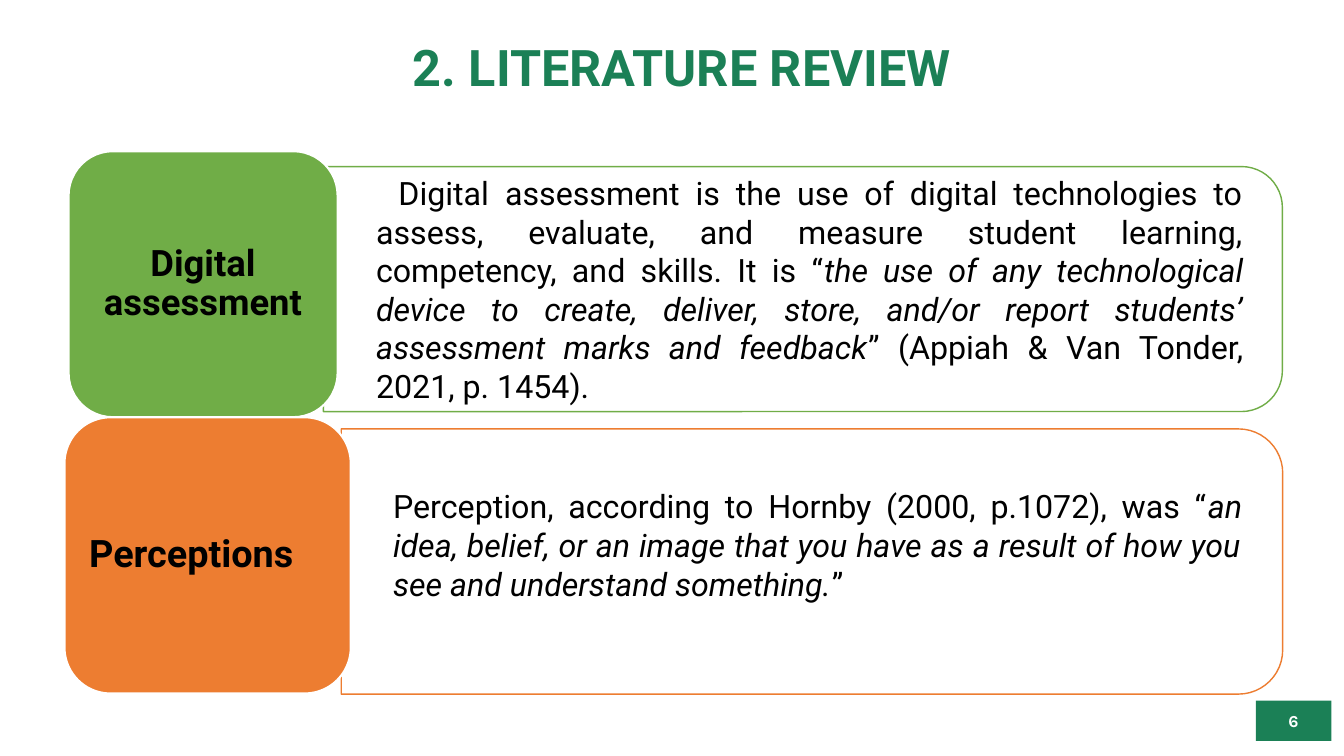
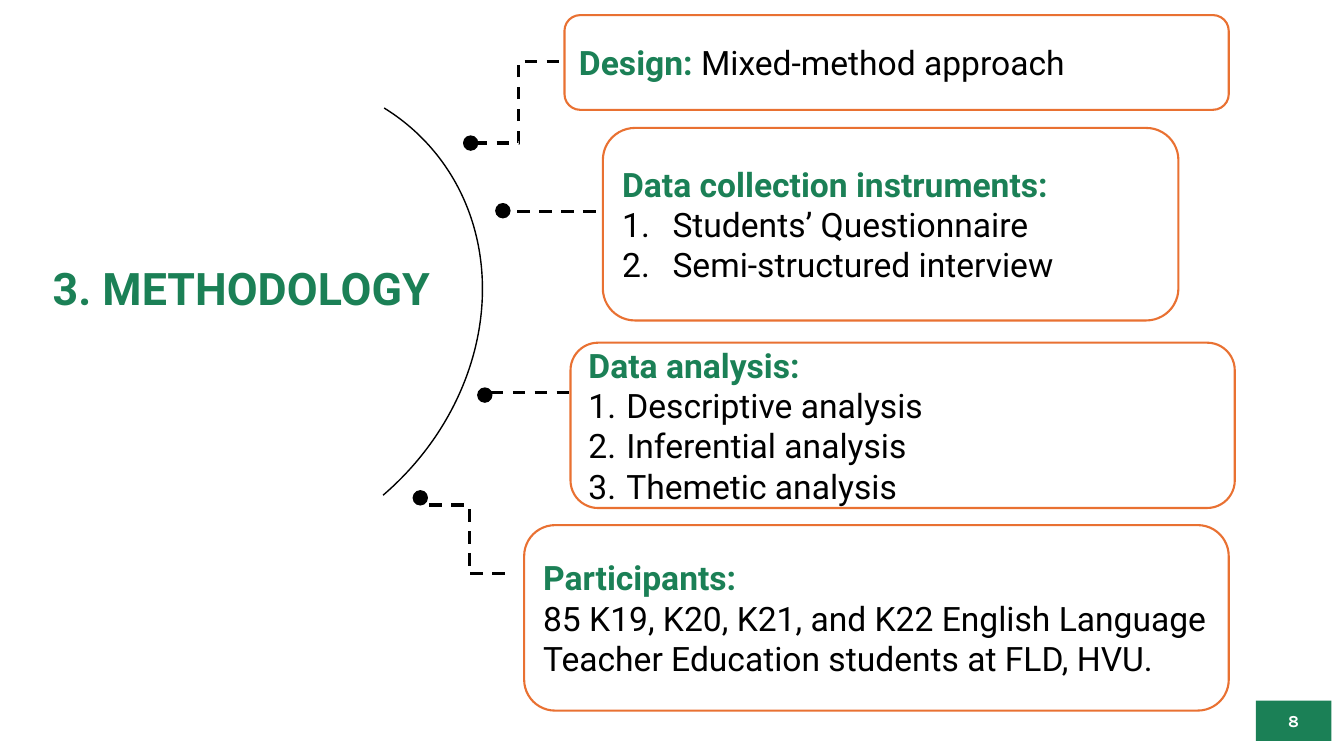
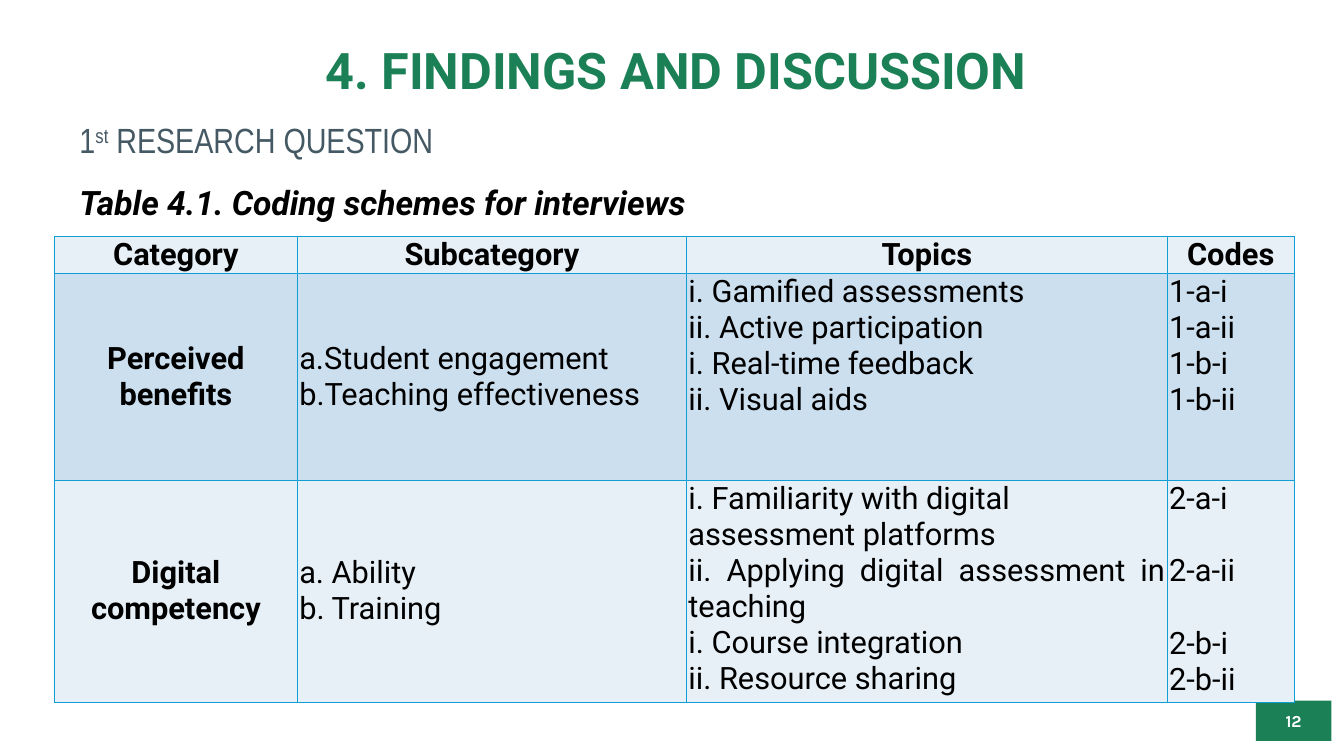
from lxml.etree import SubElement
from pptx import Presentation
from pptx.dml.color import RGBColor
from pptx.enum.dml import MSO_LINE
from pptx.enum.shapes import MSO_CONNECTOR, MSO_SHAPE
from pptx.enum.text import MSO_ANCHOR, PP_ALIGN
from pptx.oxml.ns import qn
from pptx.util import Pt

WHITE = RGBColor(0xFF, 0xFF, 0xFF)
BLACK = RGBColor(0x00, 0x00, 0x00)
GREEN = RGBColor(0x1B, 0x80, 0x56)
LEAF = RGBColor(0x70, 0xAD, 0x47)
ORANGE = RGBColor(0xED, 0x7D, 0x31)
CARD_ORANGE = RGBColor(0xE9, 0x71, 0x32)
SLATE = RGBColor(0x45, 0x59, 0x64)
TABLE_BLUE = RGBColor(0x0F, 0x9E, 0xD5)
PALE_BLUE = RGBColor(0xE7, 0xF0, 0xF7)
SOFT_BLUE = RGBColor(0xCC, 0xDF, 0xEF)

LEFT, CENTER, JUSTIFY = PP_ALIGN.LEFT, PP_ALIGN.CENTER, PP_ALIGN.JUSTIFY
TOP, MIDDLE = MSO_ANCHOR.TOP, MSO_ANCHOR.MIDDLE


def add_run(paragraph, text, size=24, color=BLACK, bold=False, italic=False,
            font="Roboto", superscript=False):
    run = paragraph.add_run()
    run.text = text
    run.font.name = font
    run.font.size = Pt(size)
    run.font.color.rgb = color
    run.font.bold = bold
    run.font.italic = italic
    if superscript:
        run._r.get_or_add_rPr().set("baseline", "30000")


def start_paragraph(frame, align=LEFT, line_spacing=None):
    """Return the empty first paragraph of a frame, or a new one after its text."""
    paragraph = frame.paragraphs[0]
    if paragraph.runs:
        paragraph = frame.add_paragraph()
    paragraph.alignment = align
    if line_spacing:
        paragraph.line_spacing = line_spacing
    return paragraph


def indent(paragraph, left, first, numbered=False):
    properties = paragraph._p.get_or_add_pPr()
    properties.set("marL", str(Pt(left)))
    properties.set("indent", str(Pt(first)))
    if numbered:
        SubElement(properties, qn("a:buAutoNum"), type="arabicPeriod")


def set_borders(cell, color, width):
    properties = cell._tc.get_or_add_tcPr()
    for side in ("a:lnL", "a:lnR", "a:lnT", "a:lnB"):
        border = SubElement(properties, qn(side), w=str(Pt(width)))
        fill = SubElement(border, qn("a:solidFill"))
        SubElement(fill, qn("a:srgbClr"), val=str(color))


class Deck:
    """Holds the presentation, its style and the current slide."""

    def __init__(self):
        self.presentation = Presentation()
        self.presentation.slide_width = Pt(960)
        self.presentation.slide_height = Pt(540)
        self.slide = None

    def new_slide(self, number, title, title_box, title_size=36):
        layout = self.presentation.slide_layouts[6]
        self.slide = self.presentation.slides.add_slide(layout)
        frame = self.text_box(*title_box, anchor=MIDDLE)
        add_run(start_paragraph(frame, CENTER, 0.9), title,
                size=title_size, color=GREEN, bold=True)
        tab = self.shape(MSO_SHAPE.RECTANGLE, 897, 500.4, 54, 28.8, GREEN)
        add_run(start_paragraph(tab.text_frame, CENTER), str(number),
                size=12, color=WHITE, bold=True, font="Karla")

    def text_box(self, left, top, width, height, anchor=TOP, margins=(7.2, 3.6)):
        box = self.slide.shapes.add_textbox(Pt(left), Pt(top), Pt(width), Pt(height))
        return self.set_frame(box.text_frame, anchor, margins)

    def set_frame(self, frame, anchor, margins):
        frame.word_wrap = True
        frame.vertical_anchor = anchor
        frame.margin_left = frame.margin_right = Pt(margins[0])
        frame.margin_top = frame.margin_bottom = Pt(margins[1])
        return frame

    def shape(self, kind, left, top, width, height, fill=None, line=None, line_width=1):
        shape = self.slide.shapes.add_shape(kind, Pt(left), Pt(top), Pt(width), Pt(height))
        shape.shadow.inherit = False
        if fill is None:
            shape.fill.background()
        else:
            shape.fill.solid()
            shape.fill.fore_color.rgb = fill
        if line is None:
            shape.line.fill.background()
        else:
            shape.line.color.rgb = line
            shape.line.width = Pt(line_width)
        self.set_frame(shape.text_frame, MIDDLE, (7.2, 3.6))
        return shape

    def panel(self, left, top, width, height, color):
        """Draw a panel with rounded right corners: a turned top-rounded rectangle."""
        shift = (width - height) / 2
        panel = self.shape(MSO_SHAPE.ROUND_2_SAME_RECTANGLE, left + shift, top - shift,
                           height, width, WHITE, color)
        panel.rotation = 90

    def definition(self, box, before, quote, after, first_indent=0):
        paragraph = start_paragraph(
            self.text_box(*box, anchor=MIDDLE, margins=(0, 0)), JUSTIFY)
        indent(paragraph, 0, first_indent)
        add_run(paragraph, before, size=23)
        add_run(paragraph, quote, size=23, italic=True)
        add_run(paragraph, after, size=23)

    def term(self, box, text, color, size, align):
        tile = self.shape(MSO_SHAPE.ROUNDED_RECTANGLE, *box, color, WHITE, 1.5)
        self.set_frame(tile.text_frame, MIDDLE, (8, 4))
        add_run(start_paragraph(tile.text_frame, align, 0.9), text, size=size, bold=True)

    def card(self, box, heading, inline="", lines=(), number_indent=0):
        card = self.shape(MSO_SHAPE.ROUNDED_RECTANGLE, *box, WHITE, CARD_ORANGE, 1.5)
        paragraph = start_paragraph(card.text_frame)
        add_run(paragraph, heading, color=GREEN, bold=True)
        if inline:
            add_run(paragraph, inline)
        for line in lines:
            paragraph = start_paragraph(card.text_frame)
            if number_indent:
                indent(paragraph, number_indent, -number_indent, numbered=True)
            add_run(paragraph, line)

    def dot(self, left, top):
        self.shape(MSO_SHAPE.FLOWCHART_CONNECTOR, left, top, 10, 10, BLACK, BLACK)

    def dashed_line(self, kind, *ends):
        line = self.slide.shapes.add_connector(kind, *(Pt(end) for end in ends))
        line.line.color.rgb = BLACK
        line.line.width = Pt(2.25)
        line.line.dash_style = MSO_LINE.DASH
        SubElement(line._element.spPr, qn("a:effectLst"))

    def table(self, left, top, widths, heights, rows):
        """Each row lists cells, each cell lists (text, align, space before)."""
        frame = self.slide.shapes.add_table(
            len(rows), len(widths), Pt(left), Pt(top), Pt(sum(widths)), Pt(sum(heights)))
        table = frame.table
        table.first_row = table.horz_banding = False
        for column, width in zip(table.columns, widths):
            column.width = Pt(width)
        for row_index, cells in enumerate(rows):
            table.rows[row_index].height = Pt(heights[row_index])
            for column_index, lines in enumerate(cells):
                cell = table.cell(row_index, column_index)
                set_borders(cell, TABLE_BLUE, 1)
                cell.fill.solid()
                cell.fill.fore_color.rgb = SOFT_BLUE if row_index % 2 else PALE_BLUE
                cell.margin_left = cell.margin_right = Pt(1.4)
                cell.margin_top = cell.margin_bottom = Pt(0)
                cell.vertical_anchor = MIDDLE if row_index and column_index < 2 else TOP
                for text, align, space in lines:
                    paragraph = start_paragraph(cell.text_frame, align)
                    if space:
                        paragraph.space_before = Pt(space)
                    add_run(paragraph, text, size=22,
                            bold=row_index == 0 or column_index == 0)


def cell_lines(*texts, align=JUSTIFY):
    return [(text, align, 0) for text in texts]


def literature_review(deck):
    deck.new_slide(6, "2. LITERATURE REVIEW", (77, 20, 820, 60))
    deck.panel(231, 119, 685, 175, LEAF)
    deck.definition(
        (268.6, 119, 620, 175),
        "Digital assessment is the use of digital technologies to assess, evaluate, "
        "and measure student learning, competency, and skills. It is “",
        "the use of any technological device to create, deliver, store, and/or report "
        "students’ assessment marks and feedback",
        "” (Appiah & Van Tonder, 2021, p. 1454).", first_indent=16)
    deck.term((49, 108, 192.2, 190), "Digital assessment", LEAF, 26, CENTER)
    deck.panel(243.7, 306.4, 672.5, 189.4, ORANGE)
    deck.definition(
        (280.8, 339, 606.5, 100),
        "Perception, according to Hornby (2000, p.1072), was “",
        "an idea, belief, or an image that you have as a result of how you see and "
        "understand something.", "”")
    deck.term((46.1, 298.1, 204.5, 197.3), "Perceptions", ORANGE, 27, LEFT)


def methodology(deck):
    deck.new_slide(8, "3. METHODOLOGY", (12, 178, 321, 60), title_size=32)
    deck.card((403.2, 10.8, 474.5, 67.7), "Design: ", inline="Mixed-method approach")
    deck.card((430.6, 91.4, 411.1, 137.5), "Data collection instruments:",
              lines=("Students’ Questionnaire", "Semi-structured interview"),
              number_indent=36)
    deck.card((374.4, 375.1, 503.3, 132.5), "Participants:",
              lines=("85 K19, K20, K21, and K22 English Language Teacher Education "
                     "students at FLD, HVU.",))
    for left, top in ((331.2, 97.2), (354.2, 145.5), (341.3, 277.2), (295.2, 350.6)):
        deck.dot(left, top)
    deck.dashed_line(MSO_CONNECTOR.ELBOW, 339.1, 102.2, 401.8, 43.9)
    deck.dashed_line(MSO_CONNECTOR.STRAIGHT, 369.4, 151.2, 430.6, 151.2)
    deck.dashed_line(MSO_CONNECTOR.STRAIGHT, 350.6, 280.1, 411.8, 280.1)
    deck.dashed_line(MSO_CONNECTOR.ELBOW, 306.7, 360.7, 363.6, 409.7)
    arc = deck.shape(MSO_SHAPE.ARC, 1.4, 41, 329.8, 375.1, line=BLACK)
    arc.adjustments[0] = 153.68
    arc.rotation = 49.4
    deck.card((407.5, 244.8, 474.5, 118.1), "Data analysis:",
              lines=("Descriptive analysis", "Inferential analysis", "Themetic analysis"),
              number_indent=27)


def findings(deck):
    deck.new_slide(12, "4. FINDINGS AND DISCUSSION", (69, 22, 828, 60))
    question = start_paragraph(deck.text_box(49.7, 81.4, 430.6, 37.4))
    style = {"size": 25, "color": SLATE, "font": "Arial Narrow"}
    add_run(question, "1", **style)
    add_run(question, "st", superscript=True, **style)
    add_run(question, " RESEARCH QUESTION", **style)

    header = [cell_lines(text, align=CENTER)
              for text in ("Category", "Subcategory", "Topics", "Codes")]
    benefits = [
        cell_lines("Perceived benefits", align=CENTER),
        cell_lines("a.Student engagement", "b.Teaching effectiveness"),
        cell_lines("i. Gamified assessments", "ii. Active participation",
                   "i. Real-time feedback", "ii. Visual aids"),
        cell_lines("1-a-i", "1-a-ii", "1-b-i", "1-b-ii", align=LEFT),
    ]
    competency = [
        cell_lines("Digital competency", align=CENTER),
        cell_lines("a. Ability", "b. Training"),
        cell_lines("i. Familiarity with digital assessment platforms", align=LEFT)
        + cell_lines("ii. Applying digital assessment in teaching",
                     "i. Course integration", "ii. Resource sharing"),
        [("2-a-i", LEFT, 0), ("2-a-ii", LEFT, 26), ("2-b-i", LEFT, 26), ("2-b-ii", LEFT, 0)],
    ]
    deck.table(38.9, 169.2, (173.5, 278, 343.4, 90.7), (26.4, 147.6, 158.4),
               (header, benefits, competency))
    caption = start_paragraph(deck.text_box(49.7, 112.3, 758, 46), JUSTIFY, 1.5)
    add_run(caption, "Table 4.1. Coding schemes for interviews", bold=True, italic=True)


def main():
    deck = Deck()
    literature_review(deck)
    methodology(deck)
    findings(deck)
    deck.presentation.save("out.pptx")


if __name__ == "__main__":
    main()
